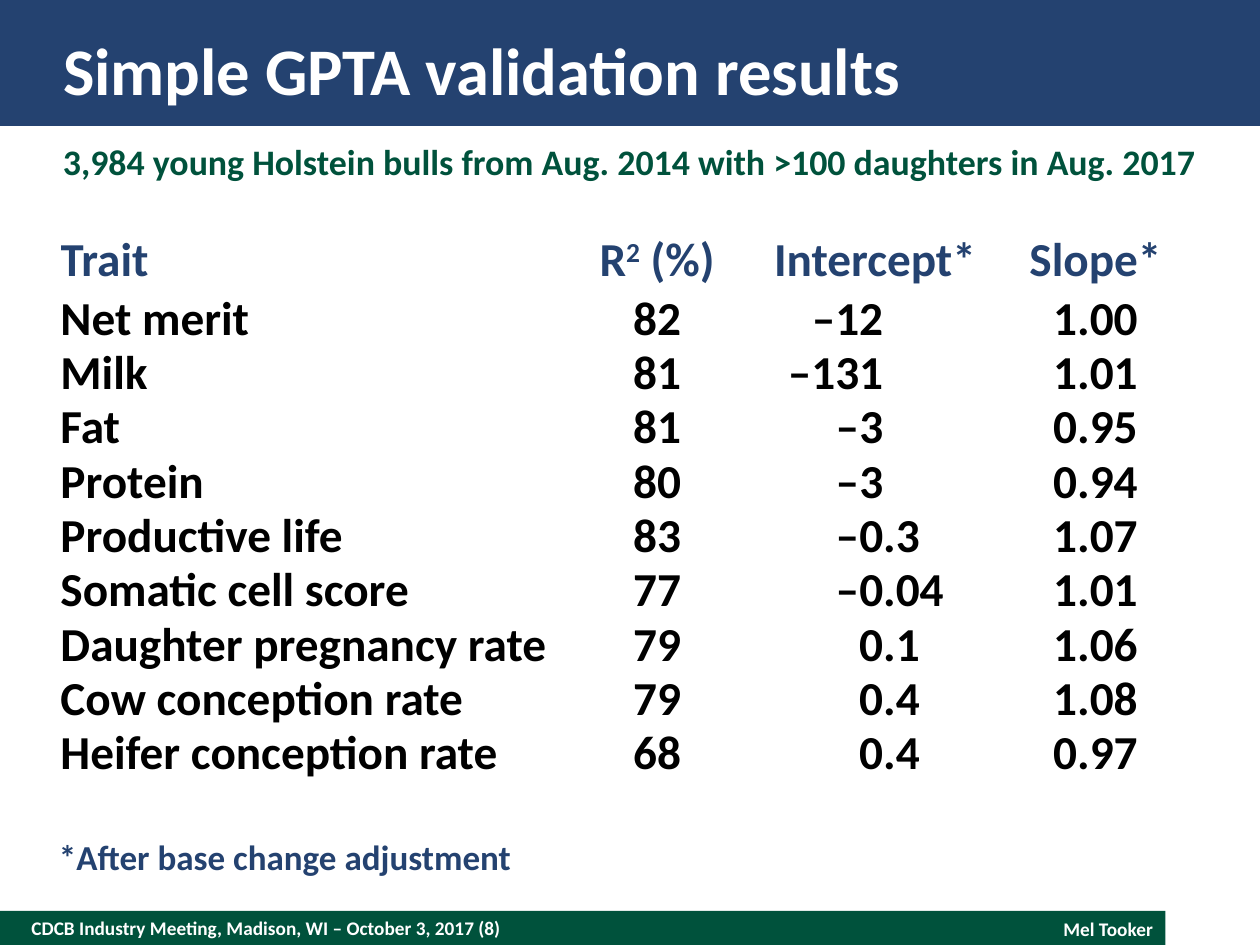
from dataclasses import dataclass

from lxml import etree
from pptx import Presentation
from pptx.dml.color import RGBColor
from pptx.enum.shapes import MSO_SHAPE
from pptx.enum.text import MSO_ANCHOR, MSO_AUTO_SIZE, PP_ALIGN
from pptx.oxml.ns import qn
from pptx.util import Inches, Pt

LEFT, CENTER, RIGHT = PP_ALIGN.LEFT, PP_ALIGN.CENTER, PP_ALIGN.RIGHT
TOP, MIDDLE = MSO_ANCHOR.TOP, MSO_ANCHOR.MIDDLE
FIT_NONE, FIT_SHAPE = MSO_AUTO_SIZE.NONE, MSO_AUTO_SIZE.SHAPE_TO_FIT_TEXT
RECTANGLE = MSO_SHAPE.RECTANGLE
TITLE_ONLY = 5


@dataclass(frozen=True)
class Theme:
    font: str = "Calibri"
    navy: RGBColor = RGBColor(0x24, 0x42, 0x70)
    green: RGBColor = RGBColor(0x00, 0x52, 0x3C)
    white: RGBColor = RGBColor(0xFF, 0xFF, 0xFF)
    black: RGBColor = RGBColor(0x00, 0x00, 0x00)
    title_size: float = 38
    table_size: float = 27
    subtitle_size: float = 20.5
    note_size: float = 20
    footer_size: float = 11
    table_leading: float = 31
    subtitle_leading: float = 25


HEADERS = ["Trait", ("R", "2", " (%)"), "Intercept*", "Slope*"]
RESULTS = [
    ("Net merit", "82", "–12", "1.00"),
    ("Milk", "81", "–131", "1.01"),
    ("Fat", "81", "–3", "0.95"),
    ("Protein", "80", "–3", "0.94"),
    ("Productive life", "83", "–0.3", "1.07"),
    ("Somatic cell score", "77", "–0.04", "1.01"),
    ("Daughter pregnancy rate", "79", "0.1", "1.06"),
    ("Cow conception rate", "79", "0.4", "1.08"),
    ("Heifer conception rate", "68", "0.4", "0.97"),
]
COLUMN_WIDTHS = [4.2, 1.07, 2.39, 1.11]
HEADER_HEIGHT, RESULT_HEIGHT = 0.49, 0.43
INTERCEPT_COLUMN = 2
DECIMAL_TAB = 1.26


class SlideBuilder:
    def __init__(self, slide, theme):
        self.slide = slide
        self.theme = theme

    def set_text(self, paragraph, content, size, color, align=LEFT, leading=None):
        """Fill a paragraph; a tuple gives base, superscript and remaining text."""
        if isinstance(content, tuple):
            base, superscript, rest = [paragraph.add_run() for _ in content]
            for run, part in zip((base, superscript, rest), content):
                run.text = part
            superscript.font._element.set("baseline", "30000")
        else:
            paragraph.text = content
        paragraph.alignment = align
        if leading:
            paragraph.line_spacing = Pt(leading)
        font = paragraph.font
        font.name, font.size, font.bold = self.theme.font, Pt(size), True
        font.color.rgb = color

    def clear_margins(self, target, bottom=0):
        target.margin_left = target.margin_top = target.margin_right = 0
        target.margin_bottom = Inches(bottom)

    def bar(self, left, top, width, height, color):
        bar = self.slide.shapes.add_shape(
            RECTANGLE, Inches(left), Inches(top), Inches(width), Inches(height))
        bar.shadow.inherit = False
        bar.fill.solid()
        bar.fill.fore_color.rgb = color
        bar.line.fill.background()

    def title(self, text, left, top, width, height):
        title = self.slide.shapes.title
        title.left, title.top = Inches(left), Inches(top)
        title.width, title.height = Inches(width), Inches(height)
        self.slide.shapes._spTree.append(title._element)  # in front of the banner
        frame = title.text_frame
        frame.auto_size, frame.vertical_anchor = FIT_NONE, MIDDLE
        self.clear_margins(frame)
        self.set_text(frame.paragraphs[0], text, self.theme.title_size, self.theme.white)

    def text(self, content, left, top, width, height, size, color, align=LEFT,
             leading=None, inset=True, wrap=True, anchor=TOP, fit=FIT_SHAPE):
        frame = self.slide.shapes.add_textbox(
            Inches(left), Inches(top), Inches(width), Inches(height)).text_frame
        frame.word_wrap, frame.auto_size, frame.vertical_anchor = wrap, fit, anchor
        if not inset:
            self.clear_margins(frame)
        self.set_text(frame.paragraphs[0], content, size, color, align, leading)

    def decimal_tab(self, paragraph, position):
        tabs = etree.SubElement(paragraph._p.get_or_add_pPr(), qn("a:tabLst"))
        etree.SubElement(tabs, qn("a:tab"), pos=str(Inches(position)), algn="dec")

    def results_table(self, headers, results, left, top):
        theme = self.theme
        heights = [HEADER_HEIGHT] + [RESULT_HEIGHT] * len(results)
        table = self.slide.shapes.add_table(
            len(heights), len(headers), Inches(left), Inches(top),
            Inches(sum(COLUMN_WIDTHS)), Inches(sum(heights))).table
        table.first_row = table.horz_banding = False
        for column, width in zip(table.columns, COLUMN_WIDTHS):
            column.width = Inches(width)
        for row, height in zip(table.rows, heights):
            row.height = Inches(height)

        for r, values in enumerate([headers, *results]):
            is_header = r == 0
            for c, value in enumerate(values):
                cell = table.cell(r, c)
                cell.fill.background()
                self.clear_margins(cell, bottom=0.03 if is_header else 0)
                paragraph = cell.text_frame.paragraphs[0]
                align = LEFT if c == 0 else CENTER
                if c == INTERCEPT_COLUMN and not is_header:
                    self.decimal_tab(paragraph, DECIMAL_TAB)
                    value, align = "\t" + value, LEFT
                self.set_text(paragraph, value, theme.table_size,
                              theme.navy if is_header else theme.black, align,
                              None if is_header else theme.table_leading)


def main():
    presentation = Presentation()
    presentation.slide_width, presentation.slide_height = Inches(10), Inches(7.5)
    theme = Theme()
    slide = presentation.slides.add_slide(presentation.slide_layouts[TITLE_ONLY])
    builder = SlideBuilder(slide, theme)

    builder.bar(0, 7.23, 9.25, 0.27, theme.green)
    builder.bar(0, 0, 10, 1, theme.navy)
    builder.text("CDCB Industry Meeting, Madison, WI – October 3, 2017 (8)",
                 0.25, 7.23, 6.5, 0.27, theme.footer_size, theme.white,
                 inset=False, anchor=MIDDLE, fit=FIT_NONE)
    builder.text("Mel Tooker", 7.25, 7.23, 2, 0.29,
                 theme.footer_size, theme.white, align=RIGHT)
    builder.title("Simple GPTA validation results", 0.5, 0.2, 9, 0.7)
    builder.results_table(HEADERS, RESULTS, 0.48, 1.84)
    builder.text("*After base change adjustment", 0.37, 6.58, 3.83, 0.44,
                 theme.note_size, theme.navy, wrap=False)
    builder.text("3,984 young Holstein bulls from Aug. 2014 with >100 daughters in Aug. 2017",
                 0.5, 1.1, 9.2, 0.35, theme.subtitle_size, theme.green,
                 leading=theme.subtitle_leading, inset=False)
    presentation.save("out.pptx")


if __name__ == "__main__":
    main()
